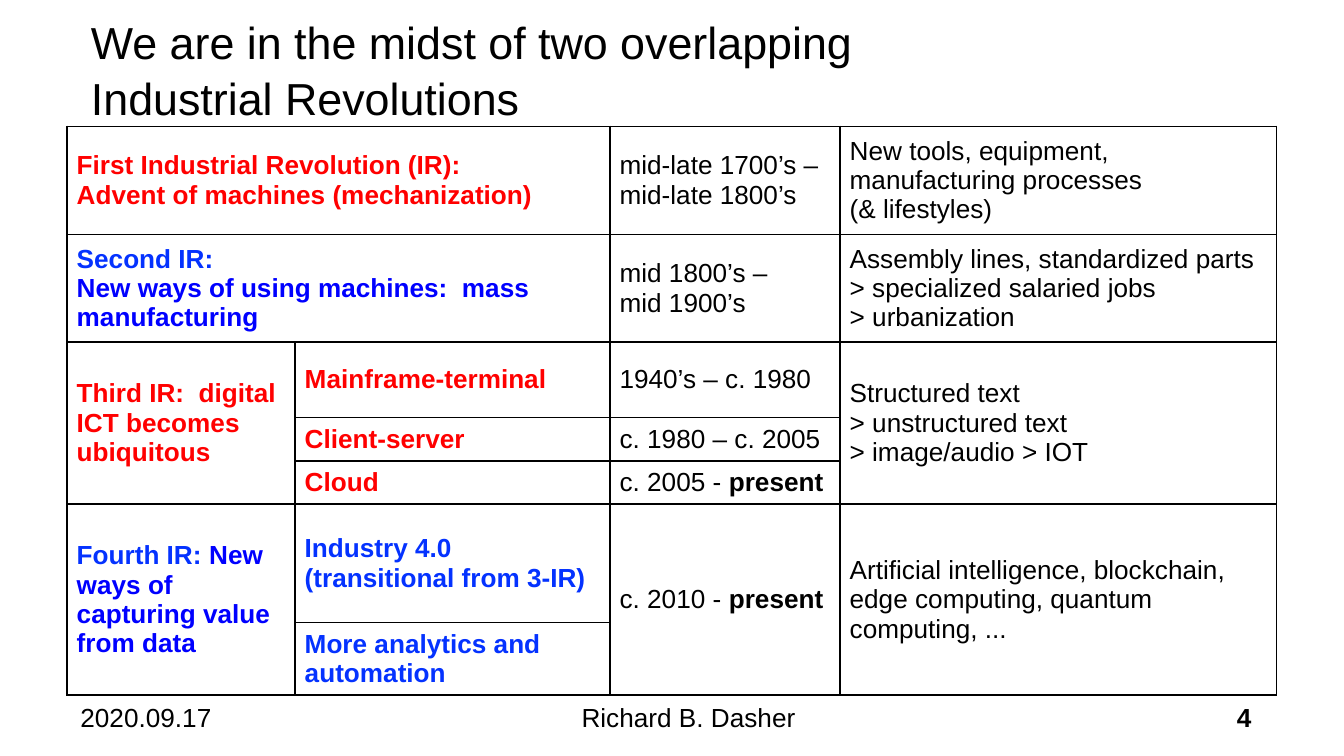
from lxml import etree
from pptx import Presentation
from pptx.dml.color import RGBColor
from pptx.enum.text import MSO_ANCHOR, PP_ALIGN
from pptx.oxml.ns import qn
from pptx.util import Cm, Pt

MIDDLE = MSO_ANCHOR.MIDDLE
BOTTOM = MSO_ANCHOR.BOTTOM
LEFT = PP_ALIGN.LEFT
CENTER = PP_ALIGN.CENTER
RIGHT = PP_ALIGN.RIGHT

BLACK = RGBColor(0x00, 0x00, 0x00)
WHITE = RGBColor(0xFF, 0xFF, 0xFF)
RED = RGBColor(0xFF, 0x00, 0x00)
BLUE = RGBColor(0x04, 0x32, 0xFF)
DEEP = RGBColor(0x00, 0x00, 0xFF)


def style(run, size, color, bold):
    run.font.name = "Arial"
    run.font.size = Pt(size)
    run.font.color.rgb = color
    run.font.bold = bold


def add_text(text, left, top, width, height, size, anchor, align, bold=False):
    box = slide.shapes.add_textbox(Cm(left), Cm(top), Cm(width), Cm(height))
    frame = box.text_frame
    frame.word_wrap = True
    frame.vertical_anchor = anchor
    para = frame.paragraphs[0]
    para.text = text
    para.alignment = align
    for run in para.runs:
        style(run, size, BLACK, bold)
    return para


deck = Presentation()
deck.slide_width = Cm(25.4)
deck.slide_height = Cm(14.29)
slide = deck.slides.add_slide(deck.slide_layouts[6])

title = add_text("We are in the midst of two overlapping\nIndustrial Revolutions",
                 1.47, 0.1, 22.45, 2.39, 24, MIDDLE, LEFT)
title.line_spacing = 1.05

widths = [4.31, 5.95, 4.35, 8.25]
heights = [2.04, 2.04, 1.42, 0.82, 0.82, 2.24, 1.34]
table = slide.shapes.add_table(len(heights), len(widths), Cm(1.27), Cm(2.39),
                               Cm(sum(widths)), Cm(sum(heights))).table
table.first_row = False
table.horz_banding = False
for col, width in zip(table.columns, widths):
    col.width = Cm(width)
for row, height in zip(table.rows, heights):
    row.height = Cm(height)

for cell in table.iter_cells():
    cell.margin_left = cell.margin_right = Cm(0.18)
    cell.margin_top = cell.margin_bottom = Cm(0.09)
    cell.vertical_anchor = MIDDLE
    props = cell._tc.get_or_add_tcPr()
    for side in ("a:lnL", "a:lnR", "a:lnT", "a:lnB"):
        line = etree.SubElement(props, qn(side), w=str(Pt(1)))
        fill = etree.SubElement(line, qn("a:solidFill"))
        etree.SubElement(fill, qn("a:srgbClr"), val=str(BLACK))
    cell.fill.solid()
    cell.fill.fore_color.rgb = WHITE

for top, left, end, last in [(0, 0, 0, 1), (1, 0, 1, 1), (2, 0, 4, 0), (2, 3, 4, 3),
                             (5, 0, 6, 0), (5, 2, 6, 2), (5, 3, 6, 3)]:
    table.cell(top, left).merge(table.cell(end, last))

now = ("present", BLACK, True)
cells = {
    (0, 0): [[("First Industrial Revolution (IR):\nAdvent of machines (mechanization)", RED, True)]],
    (0, 2): [[("mid-late 1700’s – mid-late 1800’s", BLACK, False)]],
    (0, 3): [[("New tools, equipment, manufacturing processes\n(& lifestyles)", BLACK, False)]],
    (1, 0): [[("Second IR:", BLUE, True)],
             [("New ways of using machines:  mass manufacturing", DEEP, True)]],
    (1, 2): [[("mid 1800’s –\nmid 1900’s", BLACK, False)]],
    (1, 3): [[("Assembly lines, standardized parts\n> specialized salaried jobs\n> urbanization",
               BLACK, False)]],
    (2, 0): [[("Third IR:  digital\nICT becomes ubiquitous", RED, True)]],
    (2, 1): [[("Mainframe-terminal", RED, True)]],
    (2, 2): [[("1940’s – c. 1980", BLACK, False)]],
    (2, 3): [[("Structured text\n> unstructured text\n> image/audio > IOT", BLACK, False)]],
    (3, 1): [[("Client-server", RED, True)]],
    (3, 2): [[("c. 1980 – c. 2005", BLACK, False)]],
    (4, 1): [[("Cloud", RED, True)]],
    (4, 2): [[("c. 2005 - ", BLACK, False), now]],
    (5, 0): [[("Fourth IR: ", BLUE, True), ("New ways of capturing value from data", DEEP, True)]],
    (5, 1): [[("Industry 4.0 (transitional from 3-IR)", BLUE, True)]],
    (5, 2): [[("c. 2010 - ", BLACK, False), now]],
    (5, 3): [[("Artificial intelligence, blockchain, edge computing, quantum computing, ...",
               BLACK, False)]],
    (6, 1): [[("More analytics and automation", BLUE, True)]],
}
for (row, col), paras in cells.items():
    frame = table.cell(row, col).text_frame
    for i, parts in enumerate(paras):
        para = frame.add_paragraph() if i else frame.paragraphs[0]
        text, color, bold = parts[0]
        para.text = text
        for run in para.runs:
            style(run, 14, color, bold)
        for text, color, bold in parts[1:]:
            run = para.add_run()
            run.text = text
            style(run, 14, color, bold)

for text, left, width, align, bold in [("2020.09.17", 1.27, 5.28, LEFT, False),
                                       ("Richard B. Dasher", 7.77, 10.49, CENTER, False),
                                       ("4", 18.62, 5.28, RIGHT, True)]:
    add_text(text, left, 13, width, 0.97, 14, BOTTOM, align, bold)

deck.save("out.pptx")
